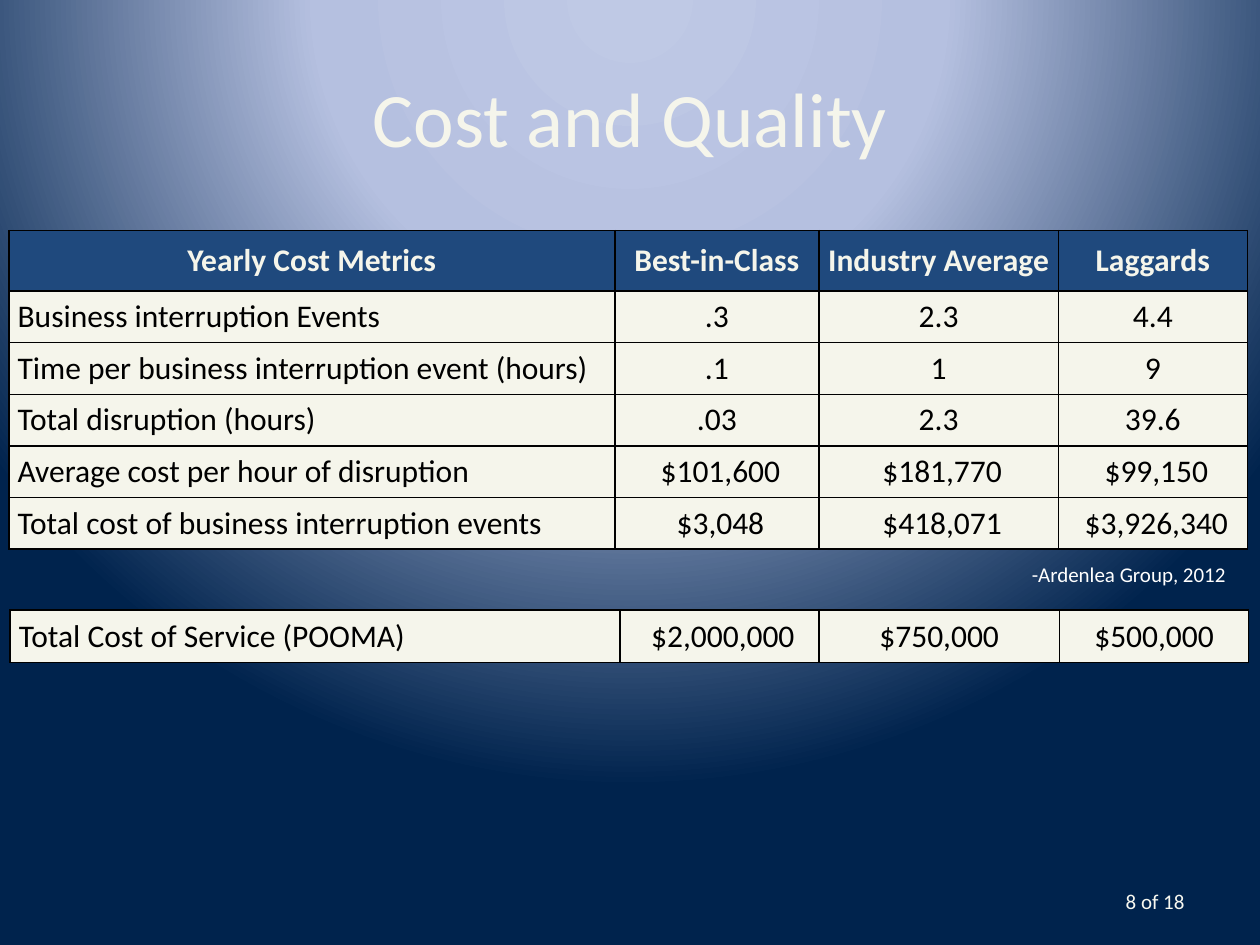
"""Build the Cost and Quality slide with its two cost tables."""
from lxml import etree
from pptx import Presentation
from pptx import util as u
from pptx.dml import color
from pptx.enum import text
from pptx.oxml import ns

COLORS = {"ivory": "F5F5EB", "footer": "F8F8F0", "white": "FFFFFF", "black": "000000",
          "header": "1F497D", "glow": "BFC9E5", "haze": "B5C0E0", "navy": "00234D"}
LEFT, CENTER, RIGHT = text.PP_ALIGN.LEFT, text.PP_ALIGN.CENTER, text.PP_ALIGN.RIGHT


def write(frame, words, size, ink, align, bold=False):
    frame.vertical_anchor = text.MSO_ANCHOR.MIDDLE
    line = frame.paragraphs[0]
    line.alignment = align
    run = line.add_run()
    run.text = words
    run.font.name = "Calibri"
    run.font.size = u.Pt(size)
    run.font.bold = bold
    run.font.color.rgb = color.RGBColor.from_string(COLORS[ink])


def add_costs(slide, left, top, widths, heights, rows, has_header):
    costs = slide.shapes.add_table(
        len(rows), len(widths), u.Inches(left), u.Inches(top),
        u.Inches(sum(widths)), u.Inches(sum(heights))).table
    costs.first_row = costs.horz_banding = False
    for column, width in zip(costs.columns, widths):
        column.width = u.Inches(width)
    for r, (height, row) in enumerate(zip(heights, rows)):
        costs.rows[r].height = u.Inches(height)
        heading = has_header and r == 0
        for c, words in enumerate(row):
            cell = costs.cell(r, c)
            cell.margin_left = cell.margin_right = u.Inches(0.07)
            cell.margin_top = cell.margin_bottom = 0
            write(cell.text_frame, words, 18, "ivory" if heading else "black",
                  CENTER if heading or c else LEFT, heading)
            cell.vertical_anchor = text.MSO_ANCHOR.MIDDLE
            properties = cell._tc.get_or_add_tcPr()
            for side in ("lnL", "lnR", "lnT", "lnB"):
                border = etree.SubElement(properties, ns.qn("a:" + side), w=str(u.Pt(1)))
                paint = etree.SubElement(border, ns.qn("a:solidFill"))
                etree.SubElement(paint, ns.qn("a:srgbClr"), val=COLORS["black"])
            cell.fill.solid()
            cell.fill.fore_color.rgb = color.RGBColor.from_string(
                COLORS["header" if heading else "ivory"])


deck = Presentation()
deck.slide_width, deck.slide_height = u.Inches(10), u.Inches(7.5)
slide = deck.slides.add_slide(deck.slide_layouts[5])

slide.background.fill.gradient()
gradient = slide.element.find(".//" + ns.qn("a:gradFill"))
for part in list(gradient):
    gradient.remove(part)
stops = etree.SubElement(gradient, ns.qn("a:gsLst"))
for percent, shade in ((0, "glow"), (40, "haze"), (100, "navy")):
    stop = etree.SubElement(stops, ns.qn("a:gs"), pos=str(percent * 1000))
    etree.SubElement(stop, ns.qn("a:srgbClr"), val=COLORS[shade])
circle = etree.SubElement(gradient, ns.qn("a:path"), {"path": "circle"})
etree.SubElement(circle, ns.qn("a:fillToRect"), l="50000", t="-80000", r="50000", b="180000")

title = slide.shapes.title
title.left, title.top = u.Inches(0.5), u.Inches(0.3)
title.width, title.height = u.Inches(9), u.Inches(1.25)
write(title.text_frame, "Cost and Quality", 44, "ivory", CENTER)

for words, box, ink, align, wrap in (
        ("8 of 18", (7.17, 6.95, 2.33, 0.4), "footer", RIGHT, True),
        ("-Ardenlea Group, 2012", (8.09, 4.41, 1.81, 0.3), "white", LEFT, False)):
    note = slide.shapes.add_textbox(*map(u.Inches, box)).text_frame
    note.word_wrap = wrap
    write(note, words, 12, ink, align)

add_costs(slide, 0.08, 4.84, (4.84, 1.58, 1.91, 1.5), (0.42,), (
    ("Total Cost of Service (POOMA)", " $2,000,000", "$750,000", "$500,000"),
), False)
add_costs(slide, 0.07, 1.83, (4.81, 1.62, 1.9, 1.5), (0.48,) + (0.41,) * 5, (
    ("Yearly Cost Metrics", "Best-in-Class", "Industry Average", "Laggards"),
    ("Business interruption Events", ".3", "2.3", "4.4"),
    ("Time per business interruption event (hours)", ".1", "1", "9"),
    ("Total disruption (hours)", ".03", "2.3", "39.6"),
    ("Average cost per hour of disruption", " $101,600", " $181,770", " $99,150"),
    ("Total cost of business interruption events", " $3,048", " $418,071", " $3,926,340"),
), True)

deck.save("out.pptx")
